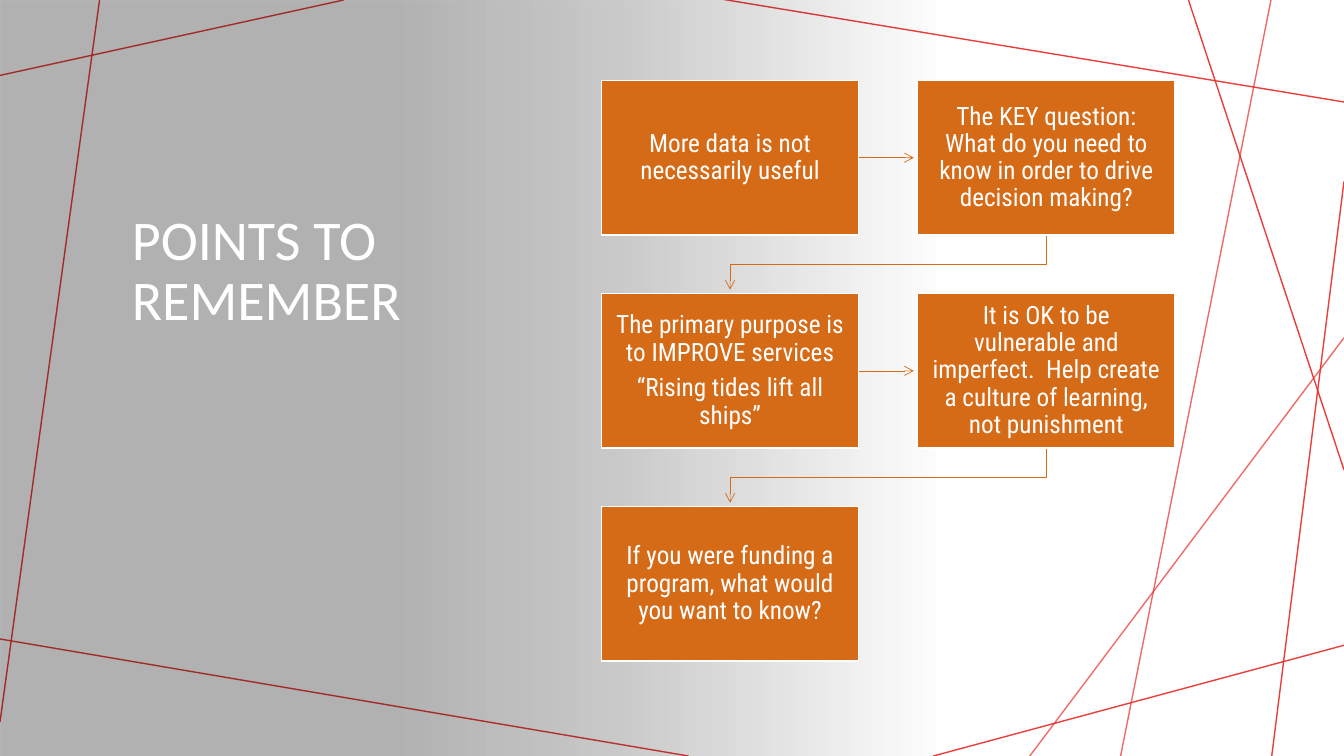
from lxml.etree import SubElement
from pptx import Presentation
from pptx.dml.color import RGBColor
from pptx.enum.shapes import MSO_CONNECTOR, MSO_SHAPE
from pptx.enum.text import MSO_ANCHOR, PP_ALIGN
from pptx.oxml import parse_xml
from pptx.oxml.ns import nsdecls, qn
from pptx.util import Cm, Pt

WHITE = RGBColor(0xFF, 0xFF, 0xFF)
RED = RGBColor(0xE7, 0x2D, 0x29)
ORANGE = RGBColor(0xD5, 0x6A, 0x17)

SLIDE_WIDTH, SLIDE_HEIGHT = 33.87, 19.05
GRID_LEFT, GRID_TOP = 15.16, 2.03
BOX_WIDTH, BOX_HEIGHT = 6.48, 3.89
COLUMN_PITCH, ROW_PITCH = 7.97, 5.37
ARROW_GAP = 0.1

# Start x, start y, end x, end y in centimetres
BACK_LINES = [
    (8.66, 0, 0, 1.9),
    (2.51, 0, 0, 18.19),
    (17.35, 19.05, -0.13, 16.08),
    (33.87, 16.26, 23.52, 19.05),
    (33.87, 4.57, 32.05, 19.05),
    (33.87, 11.84, 29.95, 0),
    (33.87, 2.57, 18.14, -0.03),
]
FRONT_LINES = [(25.93, 19.08, 33.87, 8.51), (28.24, 19.05, 32.03, 0)]

# Position along the gradient and opacity, both in percent
SHADE_STOPS = [(0, 0), (33, 20), (58, 30), (100, 30)]

POINTS = [
    ["More data is not necessarily useful"],
    ["The KEY question: What do you need to know in order to drive decision making?"],
    ["The primary purpose is to IMPROVE services", "“Rising tides lift all ships”"],
    ["It is OK to be vulnerable and imperfect.  Help create a culture of learning, "
     "not punishment"],
    ["If you were funding a program, what would you want to know?"],
]


def write_text(frame, paragraphs, *, font, size, color, align, anchor, space_after=0):
    frame.word_wrap = True
    frame.vertical_anchor = anchor
    for index, wording in enumerate(paragraphs):
        paragraph = frame.add_paragraph() if index else frame.paragraphs[0]
        paragraph.alignment = align
        paragraph.line_spacing = 0.9
        paragraph.space_before = Pt(0)
        paragraph.space_after = Pt(space_after)
        run = paragraph.add_run()
        run.text = wording
        run.font.name = font
        run.font.size = Pt(size)
        run.font.color.rgb = color


class PointsSlide:
    title_font = "Calibri"
    body_font = "Roboto Condensed"

    def __init__(self, slide):
        self.slide = slide
        self.shapes = slide.shapes

    def title(self, wording, left, top, width, height):
        title = self.shapes.title
        title.left, title.top = Cm(left), Cm(top)
        title.width, title.height = Cm(width), Cm(height)
        write_text(title.text_frame, [wording], font=self.title_font, size=40,
                   color=WHITE, align=PP_ALIGN.LEFT, anchor=MSO_ANCHOR.BOTTOM)

    def line(self, ends, color, weight, opacity=100):
        line = self.shapes.add_connector(MSO_CONNECTOR.STRAIGHT, *map(Cm, ends))
        line.line.color.rgb = color
        line.line.width = Pt(weight)
        SubElement(line._element.spPr, qn("a:effectLst"))
        tone = line._element.spPr.find(".//" + qn("a:srgbClr"))
        SubElement(tone, qn("a:alpha"), val=str(opacity * 1000))
        return line

    def shade(self, width):
        """Draw a black panel that fades out towards its right edge."""
        panel = self.shapes.add_shape(MSO_SHAPE.RECTANGLE, 0, 0, Cm(width), Cm(SLIDE_HEIGHT))
        panel.shadow.inherit = False
        panel.line.fill.background()
        stops = "".join(
            f'<a:gs pos="{position * 1000}"><a:srgbClr val="000000">'
            f'<a:alpha val="{opacity * 1000}"/></a:srgbClr></a:gs>'
            for position, opacity in SHADE_STOPS)
        gradient = parse_xml(
            f'<a:gradFill {nsdecls("a")} rotWithShape="1"><a:gsLst>{stops}</a:gsLst>'
            '<a:lin ang="10800000" scaled="0"/></a:gradFill>')
        panel._element.spPr.find(qn("a:prstGeom")).addnext(gradient)

    def box(self, paragraphs, left, top):
        box = self.shapes.add_shape(MSO_SHAPE.RECTANGLE, Cm(left), Cm(top),
                                    Cm(BOX_WIDTH), Cm(BOX_HEIGHT))
        box.shadow.inherit = False
        box.fill.solid()
        box.fill.fore_color.rgb = ORANGE
        box.line.color.rgb = WHITE
        box.line.width = Pt(1)
        frame = box.text_frame
        frame.margin_left = frame.margin_right = Cm(0.31)
        frame.margin_top = frame.margin_bottom = Cm(0.33)
        write_text(frame, paragraphs, font=self.body_font, size=18, color=WHITE,
                   align=PP_ALIGN.CENTER, anchor=MSO_ANCHOR.MIDDLE, space_after=6)

    def add_arrowhead(self, arrow):
        SubElement(arrow.line._get_or_add_ln(), qn("a:tailEnd"), type="arrow")

    def straight_arrow(self, ends):
        self.add_arrowhead(self.line(ends, ORANGE, 0.5))

    def bent_arrow(self, corners):
        start, *others = [(Cm(x), Cm(y)) for x, y in corners]
        builder = self.shapes.build_freeform(*start)
        builder.add_line_segments(others, close=False)
        arrow = builder.convert_to_shape()
        arrow.shadow.inherit = False
        arrow.fill.background()
        arrow.line.color.rgb = ORANGE
        arrow.line.width = Pt(0.5)
        self.add_arrowhead(arrow)

    def flow(self, points):
        """Place the points two to a row, each leading to the next."""
        for index, paragraphs in enumerate(points):
            row, column = divmod(index, 2)
            left = GRID_LEFT + column * COLUMN_PITCH
            top = GRID_TOP + row * ROW_PITCH
            center, bottom = left + BOX_WIDTH / 2, top + BOX_HEIGHT
            if index < len(points) - 1:
                if column == 0:
                    middle = top + BOX_HEIGHT / 2
                    self.straight_arrow((left + BOX_WIDTH, middle,
                                         left + COLUMN_PITCH - ARROW_GAP, middle))
                else:
                    target = center - COLUMN_PITCH
                    bend = (bottom + top + ROW_PITCH) / 2
                    self.bent_arrow([(center, bottom), (center, bend), (target, bend),
                                     (target, top + ROW_PITCH - ARROW_GAP)])
            self.box(paragraphs, left, top)


def main():
    deck = Presentation()
    deck.slide_width, deck.slide_height = Cm(SLIDE_WIDTH), Cm(SLIDE_HEIGHT)
    page = PointsSlide(deck.slides.add_slide(deck.slide_layouts[5]))
    for ends in BACK_LINES:
        page.line(ends, RED, 1, opacity=91)
    page.shade(23.67)
    # The title stands above the shaded panel
    page.shapes._spTree.append(page.shapes.title._element)
    page.title("POINTS TO REMEMBER", 3.07, 2.41, 10.24, 6.1)
    for ends in FRONT_LINES:
        page.line(ends, RED, 1, opacity=70)
    page.flow(POINTS)
    deck.save("out.pptx")


if __name__ == "__main__":
    main()
